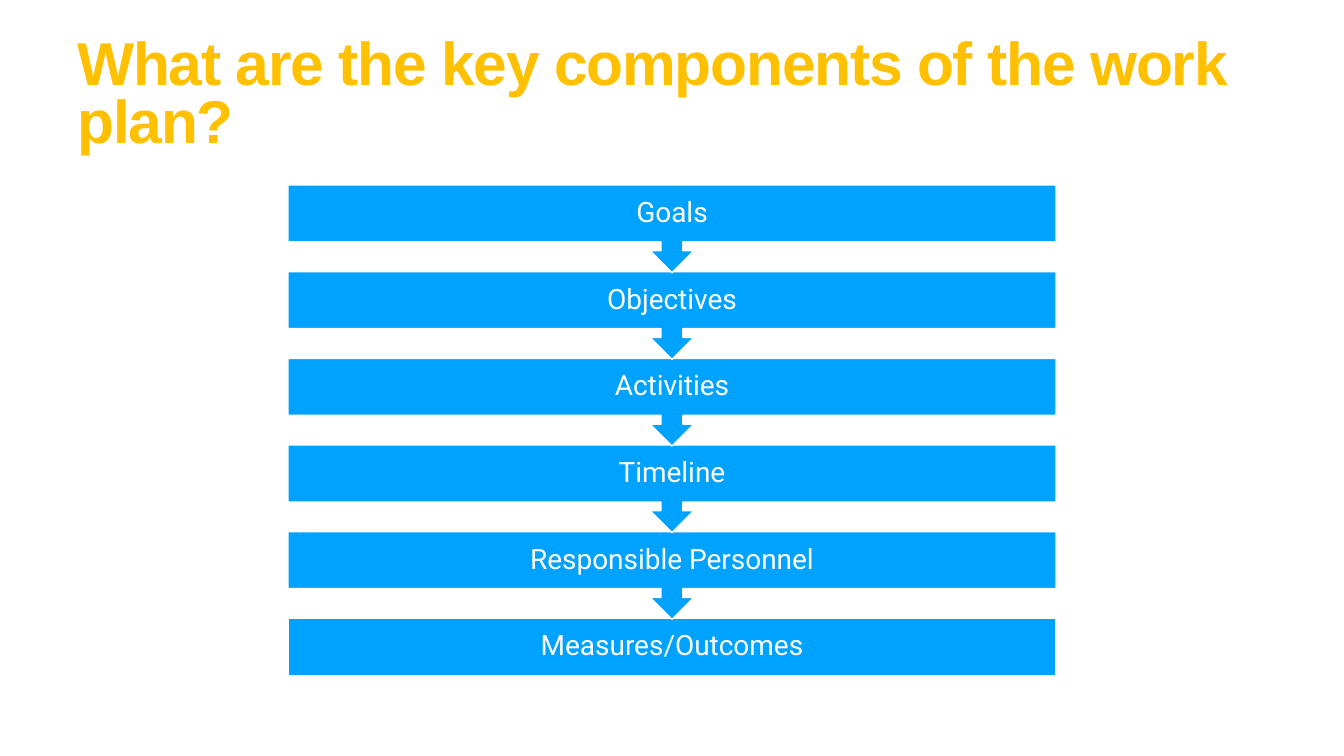
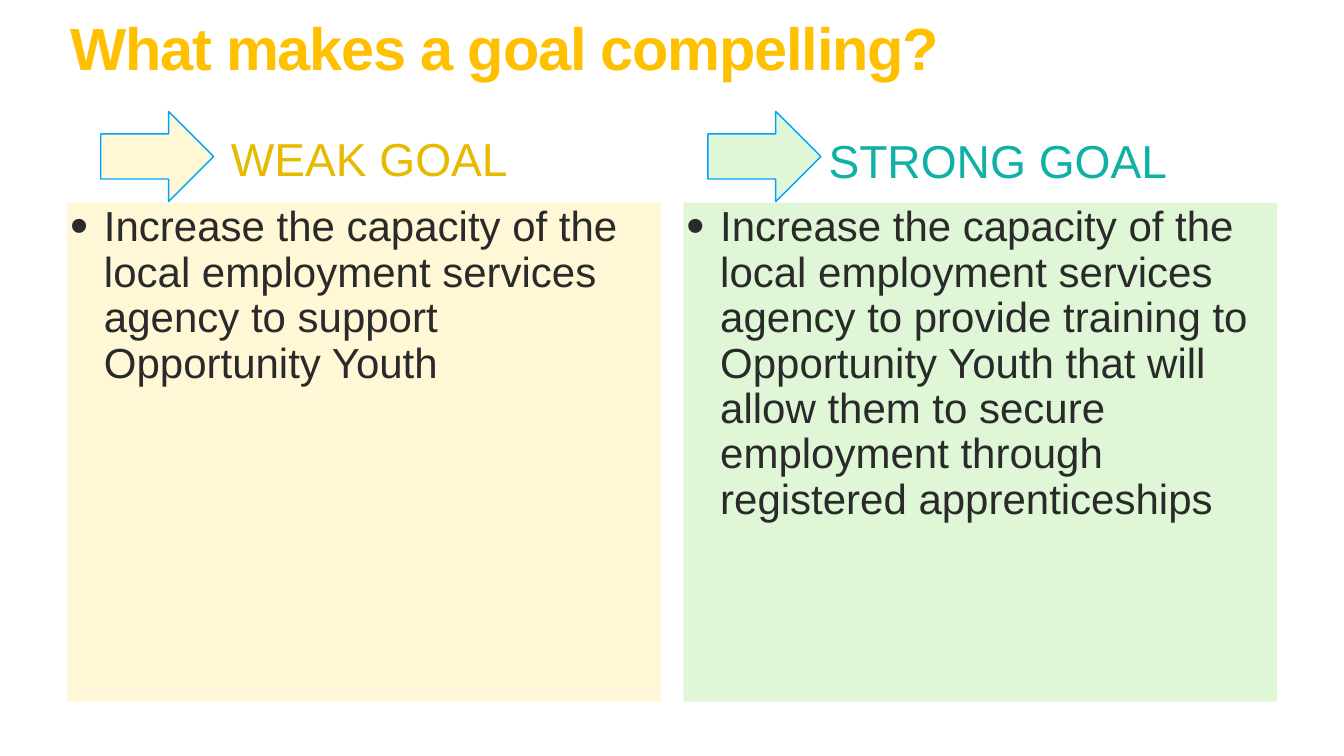
from lxml.etree import SubElement
from pptx import Presentation
from pptx.dml.color import RGBColor
from pptx.enum.shapes import MSO_SHAPE as Preset
from pptx.enum.text import MSO_ANCHOR as Anchor, MSO_AUTO_SIZE as AutoSize, PP_ALIGN as Align
from pptx.oxml.ns import qn
from pptx.util import Inches, Pt

COLORS = {
    "title": "FFC000",
    "blue": "00A2FF",
    "white": "FFFFFF",
    "body": "2A2A2A",
    "weak": "E5BA00",
    "weak_fill": "FFF7D6",
    "strong": "0EB1A4",
    "strong_fill": "DFF7D7",
}
RGB = {name: RGBColor.from_string(value) for name, value in COLORS.items()}

presentation = Presentation()
presentation.slide_width = Inches(26.67)
presentation.slide_height = Inches(15)
COLUMN = presentation.slide_width / 40
ROW = presentation.slide_height / 30


def place(shape, left, top, width, height, fill=None, line=None):
    box = {"left": left * COLUMN, "top": top * ROW, "width": width * COLUMN, "height": height * ROW}
    for name, value in box.items():
        setattr(shape, name, round(value))
    if fill:
        shape.fill.solid()
        shape.fill.fore_color.rgb = RGB[fill]
    if line:
        shape.shadow.inherit = False
        shape.line.color.rgb = RGB[line]
        shape.line.width = Pt(2)


def write(shape, text, size, color, font="Arial", bold=False, align=Align.LEFT,
          anchor=Anchor.TOP, spacing=1.0, inset=0.06, inset_y=None):
    frame = shape.text_frame
    frame.text = text
    paragraph = frame.paragraphs[0]
    side = Inches(inset)
    edge = side if inset_y is None else Inches(inset_y)
    formats = [
        (frame, {"word_wrap": True, "auto_size": AutoSize.NONE, "vertical_anchor": anchor,
                 "margin_left": side, "margin_right": side, "margin_top": edge, "margin_bottom": edge}),
        (paragraph, {"alignment": align, "line_spacing": spacing}),
        (paragraph.runs[0].font, {"name": font, "size": Pt(size), "bold": bold}),
    ]
    for target, values in formats:
        for name, value in values.items():
            setattr(target, name, value)
    paragraph.runs[0].font.color.rgb = RGB[color]
    return paragraph


TITLE_STYLE = {"color": "title", "bold": True, "spacing": 0.8}
title_slides = [
    (5, "What are the key components of the work plan?", (2, 1.34, 36, 5),
     {"size": 86.4, "anchor": Anchor.MIDDLE, "inset": 0.2, "inset_y": 0.1}),
    (3, "What makes a goal compelling?", (2, 0.88, 32, 3.3), {"size": 85}),
]
slides = []
for layout, text, box, style in title_slides:
    slide = presentation.slides.add_slide(presentation.slide_layouts[layout])
    place(slide.shapes.title, *box)
    paragraph = write(slide.shapes.title, text, **TITLE_STYLE, **style)
    paragraph.runs[0].font._element.set("spc", "-170")
    slides.append(slide)
components_slide, goals_slide = slides

components = ["Goals", "Objectives", "Activities", "Timeline", "Responsible Personnel", "Measures/Outcomes"]
last = len(components) - 1
for index in range(last, -1, -1):
    preset, height = (Preset.RECTANGLE, 2.26) if index == last else (Preset.DOWN_ARROW_CALLOUT, 3.48)
    step = components_slide.shapes.add_shape(preset, 0, 0, 0, 0)
    place(step, 8.57, 7.34 + 3.44 * index, 22.86, height, "blue", "white")
    write(step, components[index], 40, "white", font="Roboto", align=Align.CENTER,
          anchor=Anchor.MIDDLE, spacing=0.9, inset=0.31)

goals = [
    ("weak", "WEAK GOAL", 2, 3, (6.78, 5.04),
     "Increase the capacity of the local employment services agency to support Opportunity Youth"),
    ("strong", "STRONG GOAL", 20.34, 21.07, (24.57, 5.12),
     "Increase the capacity of the local employment services agency to provide training to "
     "Opportunity Youth that will allow them to secure employment through registered apprenticeships"),
]
for number, (kind, label, panel_left, arrow_left, label_corner, text) in enumerate(goals, 1):
    fill = kind + "_fill"
    panel = goals_slide.placeholders[number]
    place(panel, panel_left, 8.04, 17.67, 19.8, fill)
    paragraph = write(panel, text, 60, "body", spacing=0.9)
    paragraph.space_before = Pt(45)
    properties = paragraph._p.get_or_add_pPr()
    properties.set("marL", str(Inches(0.67)))
    properties.set("indent", str(-Inches(0.67)))
    for tag, name, value in [("a:buSzPct", "val", "123000"), ("a:buFont", "typeface", "Arial"),
                             ("a:buChar", "char", "•")]:
        SubElement(properties, qn(tag)).set(name, value)

    heading = goals_slide.shapes.add_textbox(0, 0, 0, 0)
    place(heading, *label_corner, 15.3, 2.44)
    write(heading, label, 66, kind, anchor=Anchor.MIDDLE)

    arrow = goals_slide.shapes.add_shape(Preset.RIGHT_ARROW, 0, 0, 0, 0)
    place(arrow, arrow_left, 4.42, 3.36, 3.58, fill, "blue")

presentation.save("out.pptx")
